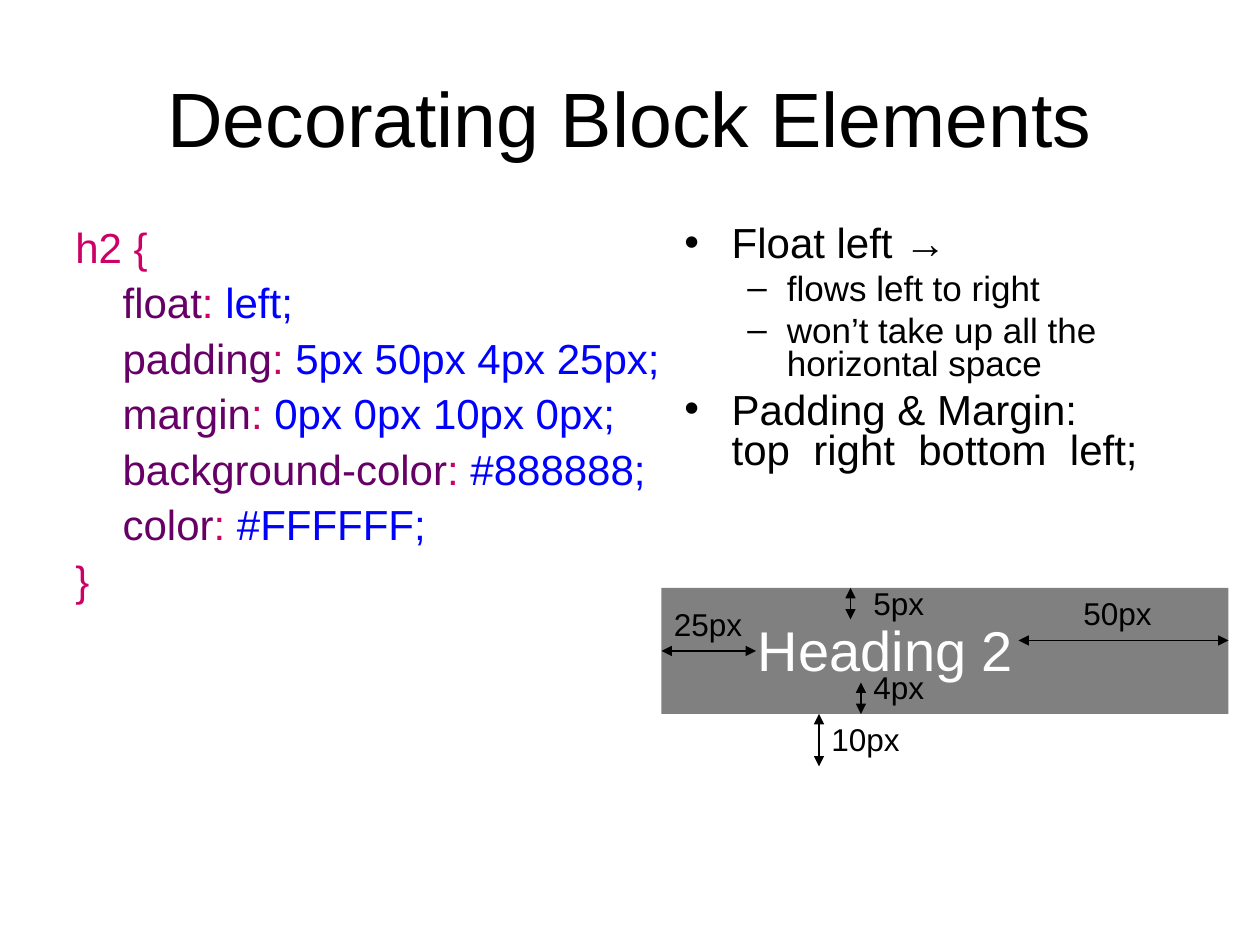
from collections import namedtuple
from dataclasses import dataclass

from lxml import etree
from pptx import Presentation
from pptx.dml.color import RGBColor
from pptx.enum.shapes import MSO_CONNECTOR, MSO_SHAPE
from pptx.enum.text import MSO_ANCHOR, PP_ALIGN
from pptx.oxml.ns import qn
from pptx.util import Pt

STRAIGHT = MSO_CONNECTOR.STRAIGHT
RECTANGLE = MSO_SHAPE.RECTANGLE
MIDDLE, TOP = MSO_ANCHOR.MIDDLE, MSO_ANCHOR.TOP
CENTER = PP_ALIGN.CENTER

Box = namedtuple("Box", "left top width height")


@dataclass(frozen=True)
class Theme:
    font: str = "Arial"
    ink: str = "000000"
    block: str = "808080"
    heading: str = "FFFFFF"
    selector: str = "CC0066"
    prop: str = "660066"
    value: str = "0000FF"
    title_size: int = 44
    heading_size: int = 32
    body_size: int = 24
    sub_size: int = 20
    label_size: int = 18


THEME = Theme()
INDENT = 27

DECLARATIONS = [
    ("float", "left;"),
    ("padding", "5px 50px 4px 25px;"),
    ("margin", "0px 0px 10px 0px;"),
    ("background-color", "#888888;"),
    ("color", "#FFFFFF;"),
]

NOTES = [
    (0, ["Float left →"]),
    (1, ["flows left to right"]),
    (1, ["won’t take up all the horizontal space"]),
    (0, ["Padding & Margin: ", "top  right  bottom  left;"]),
]

MEASURES = [
    ("10px", (90, 72), (90, 72), (90, 102)),
    ("4px", (114, 42), (114, 54), (114, 72)),
    ("5px", (114, -6), (108, 0), (108, 18)),
    ("25px", (0, 6), (0, 36), (54, 36)),
    ("50px", (234, 0), (204, 30), (324, 30)),
]


def add_frame(slide, box, anchor=TOP):
    frame = slide.shapes.add_textbox(*map(Pt, box)).text_frame
    frame.word_wrap = True
    frame.vertical_anchor = anchor
    return frame


def next_paragraph(frame):
    first = frame.paragraphs[0]
    return first if not first.runs else frame.add_paragraph()


def add_run(paragraph, text, size, color):
    run = paragraph.add_run()
    run.text = text
    run.font.name = THEME.font
    run.font.size = Pt(size)
    run.font.color.rgb = RGBColor.from_string(color)


def set_indent(paragraph, margin, hanging=0, bullet=None):
    properties = paragraph._p.get_or_add_pPr()
    properties.set("marL", str(Pt(margin)))
    properties.set("indent", str(Pt(-hanging)))
    if bullet:
        font = etree.SubElement(properties, qn("a:buFont"))
        font.set("typeface", THEME.font)
        etree.SubElement(properties, qn("a:buChar")).set("char", bullet)


def add_title(slide, box):
    paragraph = next_paragraph(add_frame(slide, box, MIDDLE))
    paragraph.alignment = CENTER
    add_run(paragraph, "Decorating Block Elements", THEME.title_size, THEME.ink)


def add_code(slide, box):
    frame = add_frame(slide, box)
    lines = [[("h2 {", THEME.selector)]]
    lines += [
        [(name, THEME.prop), (": ", THEME.selector), (value, THEME.value)]
        for name, value in DECLARATIONS
    ]
    lines.append([("}", THEME.selector)])
    for line in lines:
        paragraph = next_paragraph(frame)
        paragraph.line_spacing = 0.9
        paragraph.space_before = Pt(5.8)
        set_indent(paragraph, INDENT if len(line) > 1 else 0)
        for text, color in line:
            add_run(paragraph, text, THEME.body_size, color)


def add_notes(slide, box):
    frame = add_frame(slide, box)
    styles = [
        (THEME.body_size, 5.5, INDENT, INDENT, "•"),
        (THEME.sub_size, 4.5, 58.5, 22.5, "–"),
    ]
    for level, lines in NOTES:
        size, gap, margin, hanging, bullet = styles[level]
        paragraph = next_paragraph(frame)
        paragraph.level = level
        paragraph.line_spacing = 0.8
        paragraph.space_before = Pt(gap)
        set_indent(paragraph, margin, hanging, bullet)
        for index, text in enumerate(lines):
            if index:
                paragraph.add_line_break()
            add_run(paragraph, text, size, THEME.ink)


def add_arrow(slide, start, end):
    arrow = slide.shapes.add_connector(STRAIGHT, *map(Pt, start + end))
    arrow.line.color.rgb = RGBColor.from_string(THEME.ink)
    arrow.line.width = Pt(0.75)
    outline = arrow.line._get_or_add_ln()
    for tip in ("a:headEnd", "a:tailEnd"):
        etree.SubElement(outline, qn(tip)).set("type", "triangle")
    etree.SubElement(arrow._element.spPr, qn("a:effectLst"))


def add_box_model(slide, box):
    def place(point):
        return box.left + point[0], box.top + point[1]

    block = slide.shapes.add_shape(RECTANGLE, *map(Pt, box))
    block.shadow.inherit = False
    block.fill.solid()
    block.fill.fore_color.rgb = RGBColor.from_string(THEME.block)
    block.line.fill.background()

    heading = add_frame(slide, Box(*place((48, 12)), 204, 45))
    add_run(next_paragraph(heading), "Heading 2", THEME.heading_size, THEME.heading)

    for text, corner, start, end in MEASURES:
        add_arrow(slide, place(start), place(end))
        label = add_frame(slide, Box(*place(corner), 60, 29))
        add_run(next_paragraph(label), text, THEME.label_size, THEME.ink)


def main():
    presentation = Presentation()
    presentation.slide_width, presentation.slide_height = Pt(720), Pt(540)
    slide = presentation.slides.add_slide(presentation.slide_layouts[6])
    add_title(slide, Box(36, 21.6, 648, 90))
    add_code(slide, Box(36, 126, 360, 356.4))
    add_notes(slide, Box(384, 126, 300, 162))
    add_box_model(slide, Box(378, 336, 324, 72))
    presentation.save("out.pptx")


if __name__ == "__main__":
    main()
